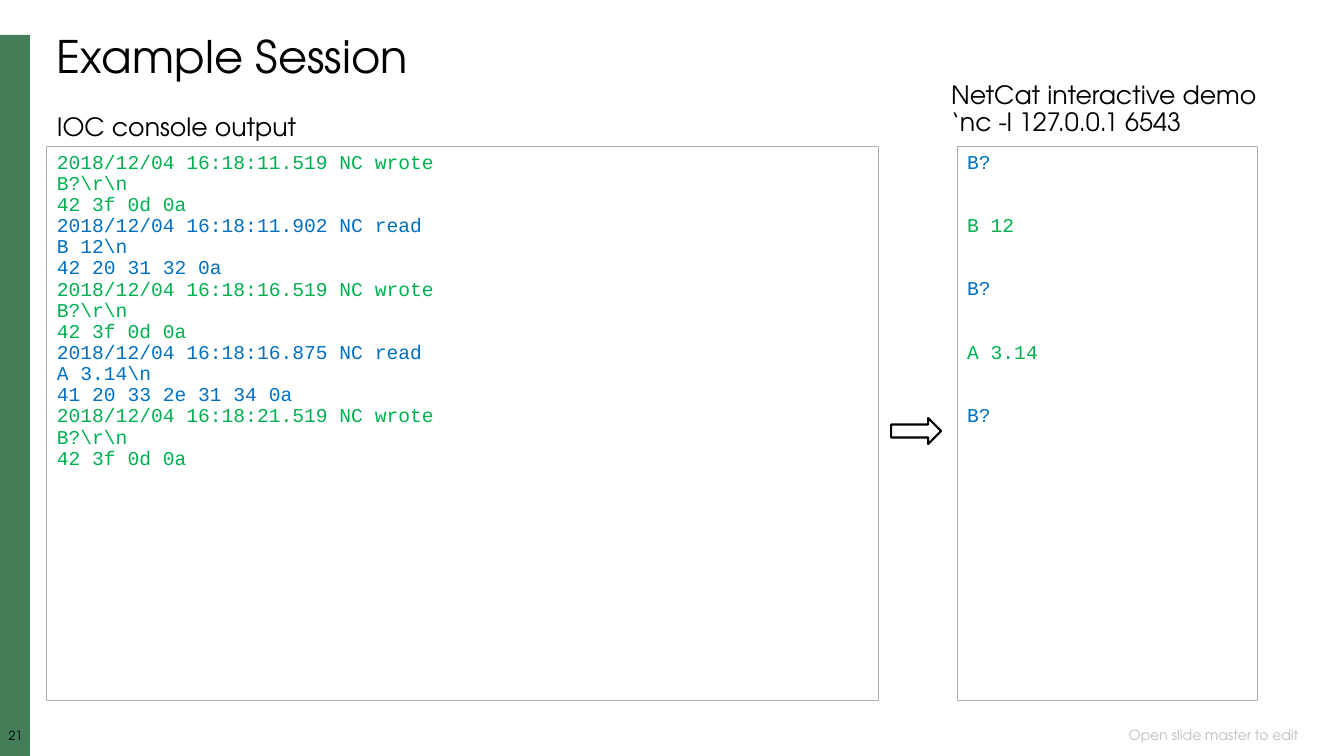
"""Build the Example Session slide: console output beside a NetCat demo."""
from lxml import etree
from pptx import Presentation
from pptx import util as u
from pptx.dml.color import RGBColor
from pptx.enum import shapes, text

PX = 914400 / 100.8
SANS, MONO = "TeX Gyre Adventor", "Courier New"
BLACK = RGBColor(0x00, 0x00, 0x00)
PALE = RGBColor(0xBF, 0xBF, 0xBF)
FRAME = RGBColor(0xAE, 0xB0, 0xAF)
BAR = RGBColor(0x44, 0x7E, 0x59)
GREEN = RGBColor(0x00, 0xB0, 0x50)
BLUE = RGBColor(0x00, 0x70, 0xC0)
LEFT, CENTER, RIGHT = text.PP_ALIGN.LEFT, text.PP_ALIGN.CENTER, text.PP_ALIGN.RIGHT

EXCHANGES = [
    ("2018/12/04 16:18:11.519 NC wrote", r"B?\r\n", "42 3f 0d 0a"),
    ("2018/12/04 16:18:11.902 NC read", r"B 12\n", "42 20 31 32 0a"),
    ("2018/12/04 16:18:16.519 NC wrote", r"B?\r\n", "42 3f 0d 0a"),
    ("2018/12/04 16:18:16.875 NC read", r"A 3.14\n", "41 20 33 2e 31 34 0a"),
    ("2018/12/04 16:18:21.519 NC wrote", r"B?\r\n", "42 3f 0d 0a"),
]
DEMO = ["B?", "B 12", "B?", "A 3.14", "B?"]
LABELS = [
    (["Example Session"], (47, 30, 1260, 60), 32, BLACK, LEFT),
    (["IOC console output"], (47, 110, 262, 37), 18, BLACK, LEFT),
    (["NetCat interactive demo", "‘nc -l 127.0.0.1 6543"], (941, 78, 332, 65), 18, BLACK, LEFT),
    (["Open slide master to edit"], (883, 726, 425, 20), 10, PALE, RIGHT),
    (["21"], (0, 730, 31, 17), 9, BLACK, CENTER),
]
CONSOLE_PANE = (47, 147, 831, 554)
DEMO_PANE = (957, 147, 300, 554)
SIDE_BAR = (0, 35, 30, 721)
ARROW = (891, 418, 50, 26)
CODE_SIZE, ROW = 14, 15.1


def emu(place):
    return [u.Emu(round(length * PX)) for length in place]


def add_block(page, kind, place, fill=None, line=None, width=0.75):
    block = page.shapes.add_shape(kind, *emu(place))
    block.shadow.inherit = False
    if fill is None:
        block.fill.background()
    else:
        block.fill.solid()
        block.fill.fore_color.rgb = fill
    if line is None:
        block.line.fill.background()
    else:
        block.line.color.rgb = line
        block.line.width = u.Pt(width)
    return block


def write(frame, lines, font, size, align, spacing, gap=0):
    for index, (words, color) in enumerate(lines):
        para = frame.add_paragraph() if index else frame.paragraphs[0]
        para.alignment = align
        para.line_spacing = spacing
        if index and gap:
            para.space_before = u.Pt(gap)
        span = para.add_run()
        span.text = words
        span.font.name = font
        span.font.size = u.Pt(size)
        span.font.color.rgb = color


def add_label(page, lines, place, size, color, align):
    frame = page.shapes.add_textbox(*emu(place)).text_frame
    frame.word_wrap = align != LEFT
    if align == LEFT:
        frame.auto_size = text.MSO_AUTO_SIZE.SHAPE_TO_FIT_TEXT
    elif align == CENTER:
        frame.margin_left = frame.margin_right = 0
        frame.margin_top = frame.margin_bottom = 0
    else:
        frame.vertical_anchor = text.MSO_ANCHOR.MIDDLE
    write(frame, [(words, color) for words in lines], SANS, size, align, 0.9)


def add_pane(page, place, lines, gap=0):
    frame = add_block(page, shapes.MSO_SHAPE.RECTANGLE, place, line=FRAME).text_frame
    frame.word_wrap = True
    frame.vertical_anchor = text.MSO_ANCHOR.TOP
    write(frame, lines, MONO, CODE_SIZE, LEFT, u.Pt(ROW), gap)


def main():
    deck = Presentation()
    deck.slide_width, deck.slide_height = u.Inches(13.33), u.Inches(7.5)
    page = deck.slides.add_slide(deck.slide_layouts[6])
    add_block(page, shapes.MSO_SHAPE.RECTANGLE, SIDE_BAR, fill=BAR)
    turns = [(GREEN, BLUE)[index % 2] for index in range(len(EXCHANGES))]
    console = [(row, color) for rows, color in zip(EXCHANGES, turns) for row in rows]
    replies = [(words, BLUE if color == GREEN else GREEN) for words, color in zip(DEMO, turns)]
    add_pane(page, CONSOLE_PANE, console)
    add_pane(page, DEMO_PANE, replies, gap=2 * ROW)
    for label in LABELS:
        add_label(page, *label)
    add_block(page, shapes.MSO_SHAPE.RIGHT_ARROW, ARROW, line=BLACK, width=1.5)
    deck.save("out.pptx")


if __name__ == "__main__":
    main()
